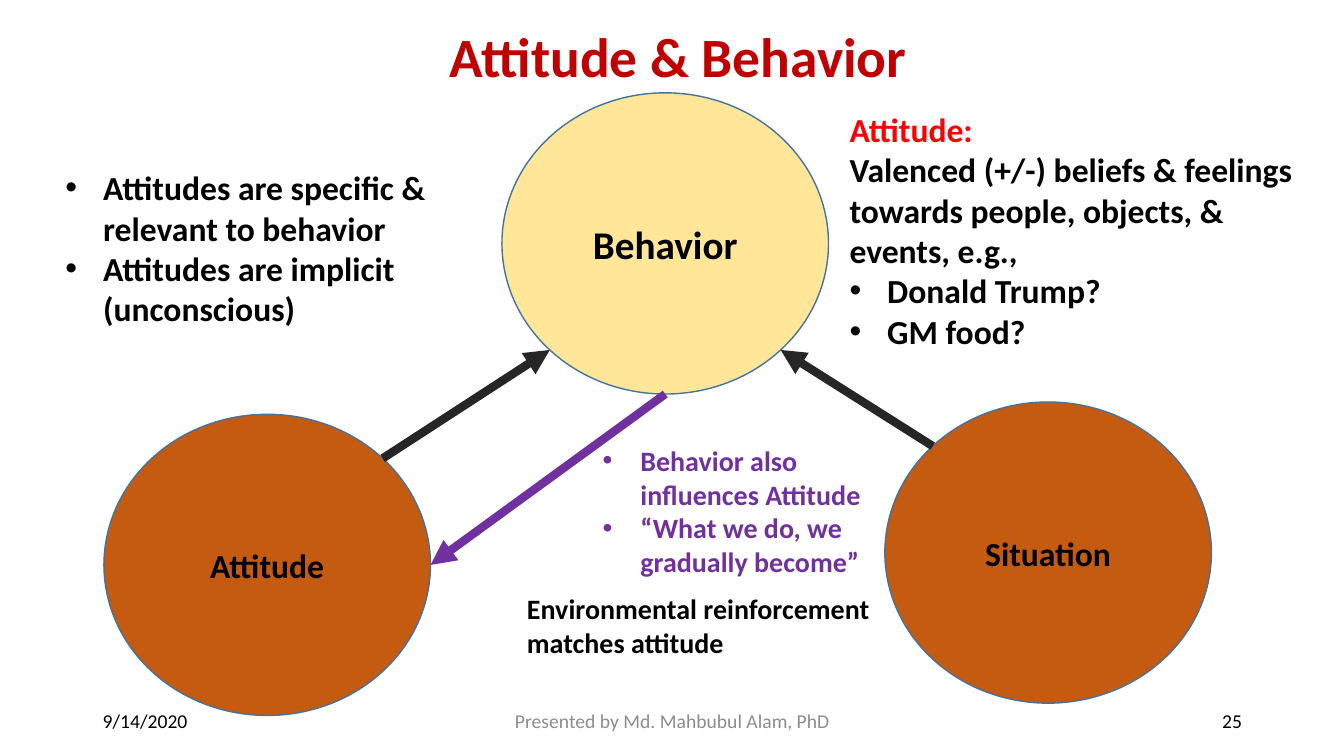
from math import cos, radians, sin

from lxml import etree
from pptx import Presentation
from pptx.dml.color import RGBColor
from pptx.enum.shapes import MSO_CONNECTOR, MSO_SHAPE
from pptx.enum.text import MSO_ANCHOR, MSO_AUTO_SIZE, PP_ALIGN
from pptx.oxml.ns import qn
from pptx.util import Cm, Pt

ELLIPSE = MSO_SHAPE.OVAL
STRAIGHT = MSO_CONNECTOR.STRAIGHT
TOP, MIDDLE = MSO_ANCHOR.TOP, MSO_ANCHOR.MIDDLE
LEFT, CENTER, RIGHT = PP_ALIGN.LEFT, PP_ALIGN.CENTER, PP_ALIGN.RIGHT
GROW = MSO_AUTO_SIZE.SHAPE_TO_FIT_TEXT

BLACK, CHARCOAL, GRAY, PURPLE = "000000", "262626", "8C8C8C", "7030A0"
DARK_RED, RED, CREAM, RUST, OUTLINE = "C00000", "FF0000", "FFE699", "C55A11", "43739E"


def rgb(value):
    return RGBColor.from_string(value)


def rim(ellipse, degrees):
    """Point on the ellipse's edge, counted clockwise from its right end."""
    angle = radians(degrees)
    x = ellipse.left + ellipse.width / 2 * (1 + cos(angle))
    y = ellipse.top + ellipse.height / 2 * (1 + sin(angle))
    return round(x), round(y)


class Diagram:
    font = "Calibri"
    circle_size = Cm(8.23), Cm(7.59)
    bullet_indent = Cm(0.95)

    def __init__(self, slide):
        self.slide = slide

    def style(self, paragraph, size, color, bold, align):
        paragraph.alignment = align
        for run in paragraph.runs:
            run.font.name = self.font
            run.font.size = Pt(size)
            run.font.bold = bold
            run.font.color.rgb = rgb(color)

    def bullet(self, paragraph):
        properties = paragraph._p.get_or_add_pPr()
        properties.set("marL", str(self.bullet_indent))
        properties.set("indent", str(-self.bullet_indent))
        etree.SubElement(properties, qn("a:buFont")).set("typeface", "Arial")
        etree.SubElement(properties, qn("a:buChar")).set("char", "•")

    def text(self, box, lines, size, color=BLACK, bold=True, align=LEFT, anchor=TOP, bullets=()):
        """Text box; bullets holds the indexes of the bulleted lines."""
        shape = self.slide.shapes.add_textbox(*map(Cm, box))
        frame = shape.text_frame
        frame.text = "\n".join(lines)
        frame.word_wrap = True
        frame.vertical_anchor = anchor
        if anchor == TOP:
            frame.auto_size = GROW
        for index, paragraph in enumerate(frame.paragraphs):
            self.style(paragraph, size, color, bold, align)
            if index in bullets:
                self.bullet(paragraph)
        return frame

    def footer(self, left, width, content, color, align):
        self.text((left, 17.65, width, 1.02), [content], 14, color, False, align, MIDDLE)

    def circle(self, left, top, label, size, fill):
        shape = self.slide.shapes.add_shape(ELLIPSE, Cm(left), Cm(top), *self.circle_size)
        shape.shadow.inherit = False
        shape.fill.solid()
        shape.fill.fore_color.rgb = rgb(fill)
        shape.line.color.rgb = rgb(OUTLINE)
        shape.line.width = Pt(1)
        shape.text_frame.text = label
        shape.text_frame.vertical_anchor = MIDDLE
        self.style(shape.text_frame.paragraphs[0], size, BLACK, True, CENTER)
        return shape

    def arrow(self, start, end, color):
        line = self.slide.shapes.add_connector(STRAIGHT, *start, *end)
        line.line.color.rgb = rgb(color)
        line.line.width = Pt(6)
        etree.SubElement(line.line._get_or_add_ln(), qn("a:tailEnd")).set("type", "triangle")
        etree.SubElement(line._element.spPr, qn("a:effectLst"))


def main():
    deck = Presentation()
    deck.slide_width, deck.slide_height = Cm(33.87), Cm(19.05)
    diagram = Diagram(deck.slides.add_slide(deck.slide_layouts[6]))

    title = diagram.text((9.27, 0.63, 15.65, 1.75), ["Attitude & Behavior"],
                         39.6, DARK_RED, align=CENTER, anchor=MIDDLE)
    title.paragraphs[0].line_spacing = 0.9

    diagram.footer(2.34, 7.62, "9/14/2020", BLACK, LEFT)
    diagram.footer(23.93, 7.62, "25", BLACK, RIGHT)

    behavior = diagram.circle(12.65, 2.34, "Behavior", 28, CREAM)
    situation = diagram.circle(22.3, 10.13, "Situation", 24, RUST)
    attitude = diagram.circle(2.62, 10.44, "Attitude", 24, RUST)

    diagram.arrow(rim(attitude, -45), rim(behavior, 135), CHARCOAL)
    diagram.arrow(rim(situation, -135), rim(behavior, 45), CHARCOAL)

    diagram.text((1.4, 4.09, 11.63, 5.21), [
        "Attitudes are specific & relevant to behavior",
        "Attitudes are implicit (unconscious)",
    ], 24, bullets=(0, 1))
    definition = diagram.text((21.16, 2.62, 12.45, 6.4), [
        "Attitude:",
        "Valenced (+/-) beliefs & feelings towards people, objects, & events, e.g.,",
        "Donald Trump?",
        "GM food?",
    ], 24, bullets=(2, 3))
    definition.paragraphs[0].runs[0].font.color.rgb = rgb(RED)
    diagram.text((14.94, 11.05, 7.85, 3.68), [
        "Behavior also influences Attitude",
        "“What we do, we gradually become”",
    ], 20, PURPLE, bullets=(0, 1))
    diagram.text((13.03, 14.78, 11.63, 1.96),
                 ["Environmental reinforcement matches attitude"], 20)

    diagram.arrow(rim(behavior, 90), rim(attitude, 0), PURPLE)
    diagram.footer(11.23, 11.43, "Presented by Md. Mahbubul Alam, PhD", GRAY, CENTER)

    deck.save("out.pptx")


if __name__ == "__main__":
    main()
